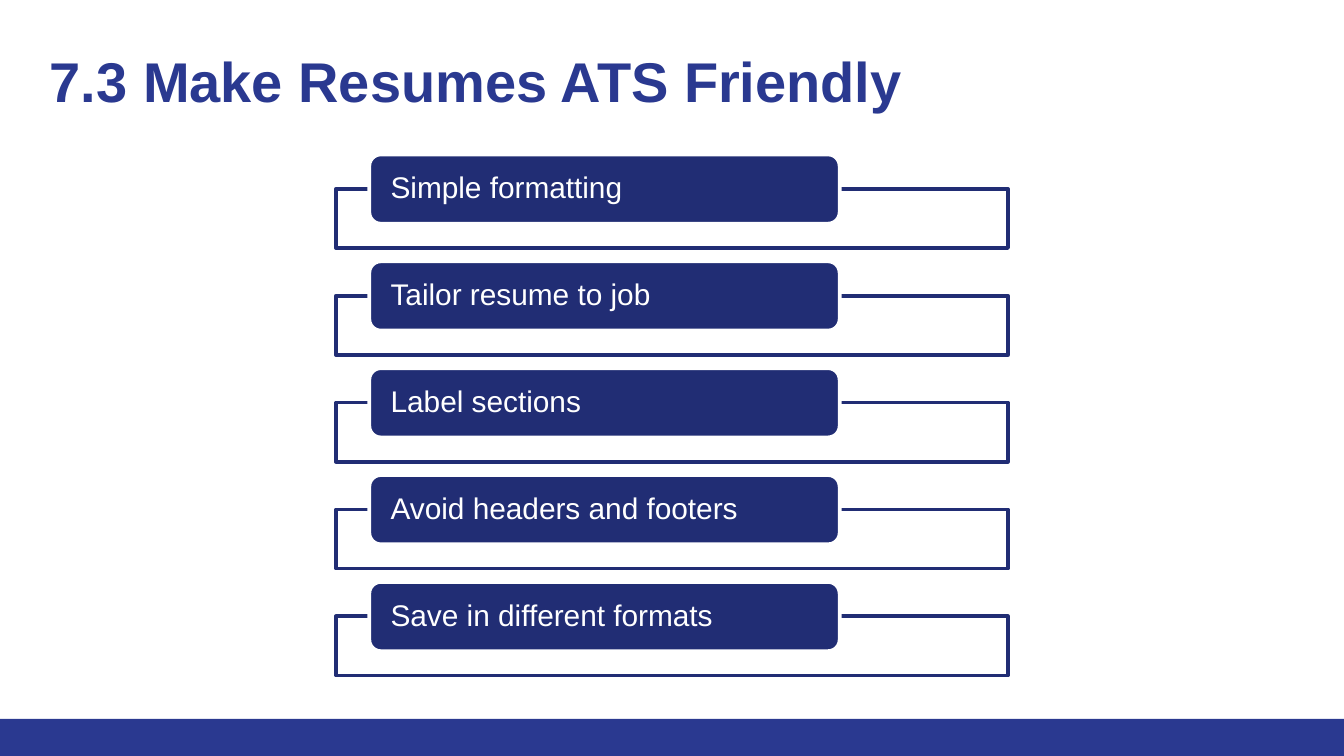
from pptx import Presentation
from pptx.dml.color import RGBColor
from pptx.enum.shapes import MSO_SHAPE
from pptx.enum.text import MSO_ANCHOR, PP_ALIGN
from pptx.util import Cm, Pt

ROYAL_BLUE = RGBColor(0x2A, 0x39, 0x90)
NAVY = RGBColor(0x21, 0x2D, 0x74)
WHITE = RGBColor(0xFF, 0xFF, 0xFF)

SLIDE_WIDTH = Cm(25.4)
SLIDE_HEIGHT = Cm(14.29)
FOOTER_HEIGHT = Cm(0.7)

TIPS = (
    "Simple formatting",
    "Tailor resume to job",
    "Label sections",
    "Avoid headers and footers",
    "Save in different formats",
)
FIRST_TIP_TOP = Cm(2.92)
TIP_PITCH = Cm(2.02)


def add_block(slide, preset, left, top, width, height, fill, outline=None):
    """Add a flat filled shape, with a 2 pt line if an outline colour is given."""
    block = slide.shapes.add_shape(preset, left, top, width, height)
    block.shadow.inherit = False
    block.fill.solid()
    block.fill.fore_color.rgb = fill
    if outline is None:
        block.line.fill.background()
    else:
        block.line.color.rgb = outline
        block.line.width = Pt(2)
    return block


def add_text(paragraph, text, size, color, bold=False):
    paragraph.alignment = PP_ALIGN.LEFT
    run = paragraph.add_run()
    run.text = text
    run.font.name = "Arial"
    run.font.size = Pt(size)
    run.font.bold = bold
    run.font.color.rgb = color


def set_title(slide, text):
    title = slide.shapes.title
    title.left, title.top = Cm(0.69), Cm(0.51)
    title.width, title.height = Cm(23.37), Cm(2.26)
    frame = title.text_frame
    frame.word_wrap = True
    frame.vertical_anchor = MSO_ANCHOR.TOP
    frame.margin_left = frame.margin_right = frame.margin_bottom = Cm(0.25)
    frame.margin_top = Cm(0.37)
    add_text(frame.paragraphs[0], text, 30, ROYAL_BLUE, bold=True)


def add_tip(slide, top, text):
    """Add an open frame with a rounded label overlapping its upper edge."""
    add_block(slide, MSO_SHAPE.RECTANGLE, Cm(6.35), top + Cm(0.65),
              Cm(12.7), Cm(1.12), WHITE, NAVY)
    label = add_block(slide, MSO_SHAPE.ROUNDED_RECTANGLE, Cm(6.98), top,
                      Cm(8.89), Cm(1.31), NAVY, WHITE)
    frame = label.text_frame
    frame.word_wrap = True
    frame.vertical_anchor = MSO_ANCHOR.MIDDLE
    frame.margin_left = frame.margin_right = Cm(0.34)
    frame.margin_top = frame.margin_bottom = 0
    paragraph = frame.paragraphs[0]
    paragraph.line_spacing = 0.9
    add_text(paragraph, text, 16, WHITE)


def main():
    presentation = Presentation()
    presentation.slide_width = SLIDE_WIDTH
    presentation.slide_height = SLIDE_HEIGHT
    slide = presentation.slides.add_slide(presentation.slide_layouts[5])

    add_block(slide, MSO_SHAPE.RECTANGLE, 0, SLIDE_HEIGHT - FOOTER_HEIGHT,
              SLIDE_WIDTH, FOOTER_HEIGHT, ROYAL_BLUE)
    set_title(slide, "7.3 Make Resumes ATS Friendly")
    for row, tip in enumerate(TIPS):
        add_tip(slide, FIRST_TIP_TOP + row * TIP_PITCH, tip)

    presentation.save("out.pptx")


if __name__ == "__main__":
    main()
